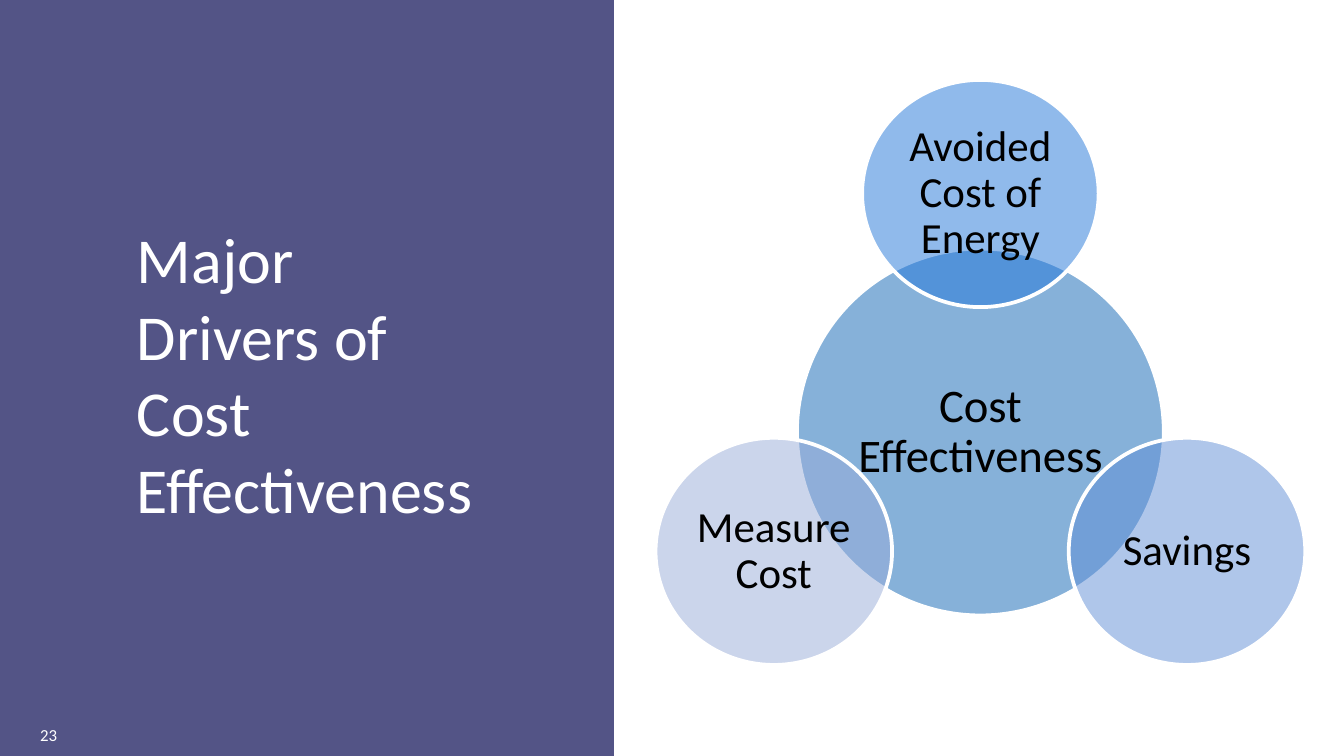
from dataclasses import dataclass
from math import cos, radians, sin, sqrt

from lxml.etree import SubElement
from pptx import Presentation
from pptx.dml.color import RGBColor
from pptx.enum.shapes import MSO_SHAPE
from pptx.enum.text import MSO_ANCHOR, PP_ALIGN
from pptx.oxml.ns import qn
from pptx.util import Pt

PX = 4572  # EMU per px, 200 px to the inch
SLIDE_WIDTH, SLIDE_HEIGHT = 2000, 1125


@dataclass(frozen=True)
class Theme:
    font: str = "Calibri"
    background: str = "535486"
    white: str = "FFFFFF"
    black: str = "000000"
    hub: str = "0E65B4"
    avoided_cost: str = "2276D9"
    savings: str = "608ED6"
    measure_cost: str = "98ADD9"
    title_size: float = 34.3
    hub_size: float = 25
    driver_size: float = 23
    number_size: float = 9
    outline: float = 2
    circle_alpha: int = 50  # percent


THEME = Theme()


def emu(*lengths):
    return [round(length * PX) for length in lengths]


def add_label(slide, box, text, size, color):
    label = slide.shapes.add_textbox(*emu(*box))
    frame = label.text_frame
    frame.word_wrap = True
    frame.text = text
    font = frame.paragraphs[0].font
    font.name, font.size = THEME.font, Pt(size)
    font.color.rgb = RGBColor.from_string(color)
    return frame


def add_outlined(slide, kind, box, color):
    outlined = slide.shapes.add_shape(kind, *emu(*box))
    outlined.shadow.inherit = False
    outlined.fill.solid()
    outlined.fill.fore_color.rgb = RGBColor.from_string(color)
    outlined.line.color.rgb = RGBColor.from_string(THEME.white)
    outlined.line.width = Pt(THEME.outline)
    return outlined


def add_circle(slide, center_x, center_y, width, height, color, text, size):
    def centered(scale):
        w, h = width * scale, height * scale
        return center_x - w / 2, center_y - h / 2, w, h

    # Translucent circle
    circle = add_outlined(slide, MSO_SHAPE.OVAL, centered(1), color)
    fill_color = circle._element.spPr.find(qn("a:solidFill"))[0]
    SubElement(fill_color, qn("a:alpha"), val=str(THEME.circle_alpha * 1000))

    # Label in the rectangle inscribed in the circle
    frame = add_label(slide, centered(1 / sqrt(2)), text, size, THEME.black)
    frame.vertical_anchor = MSO_ANCHOR.MIDDLE
    frame.margin_left = frame.margin_right = 6 * PX
    frame.margin_top = frame.margin_bottom = 6 * PX
    frame.paragraphs[0].alignment = PP_ALIGN.CENTER
    frame.paragraphs[0].line_spacing = 0.9


def add_title_panel(slide, left, top):
    # Slide number
    add_label(slide, (left + 40, top + 1069, 150, 50), "23",
              THEME.number_size, THEME.white)
    # Title
    title = add_label(slide, (left + 184, top + 13, 550, 1084),
                      "Major Drivers of Cost Effectiveness",
                      THEME.title_size, THEME.white)
    title.vertical_anchor = MSO_ANCHOR.MIDDLE


def add_drivers_diagram(slide, left, top, width, height):
    # White panel
    add_outlined(slide, MSO_SHAPE.RECTANGLE, (left, top, width, height), THEME.white)

    # Hub
    hub_x, hub_y = left + width / 2 + 1, top + 643
    add_circle(slide, hub_x, hub_y, 546, 546, THEME.hub,
               "Cost Effectiveness", THEME.hub_size)

    # Drivers, evenly spaced clockwise from the top
    drivers = [
        ("Avoided Cost of Energy", THEME.avoided_cost),
        ("Savings", THEME.savings),
        ("Measure Cost", THEME.measure_cost),
    ]
    orbit = 355
    for index, (driver, color) in enumerate(drivers):
        angle = radians(index * 360 / len(drivers) - 90)
        add_circle(slide, hub_x + orbit * cos(angle), hub_y + orbit * sin(angle),
                   352, 338, color, driver, THEME.driver_size)


def main():
    presentation = Presentation()
    presentation.slide_width, presentation.slide_height = emu(SLIDE_WIDTH, SLIDE_HEIGHT)
    slide = presentation.slides.add_slide(presentation.slide_layouts[6])
    slide.background.fill.solid()
    slide.background.fill.fore_color.rgb = RGBColor.from_string(THEME.background)

    panel_left = 916
    add_title_panel(slide, 0, 0)
    add_drivers_diagram(slide, panel_left, 0, SLIDE_WIDTH - panel_left, SLIDE_HEIGHT)
    presentation.save("out.pptx")


if __name__ == "__main__":
    main()
